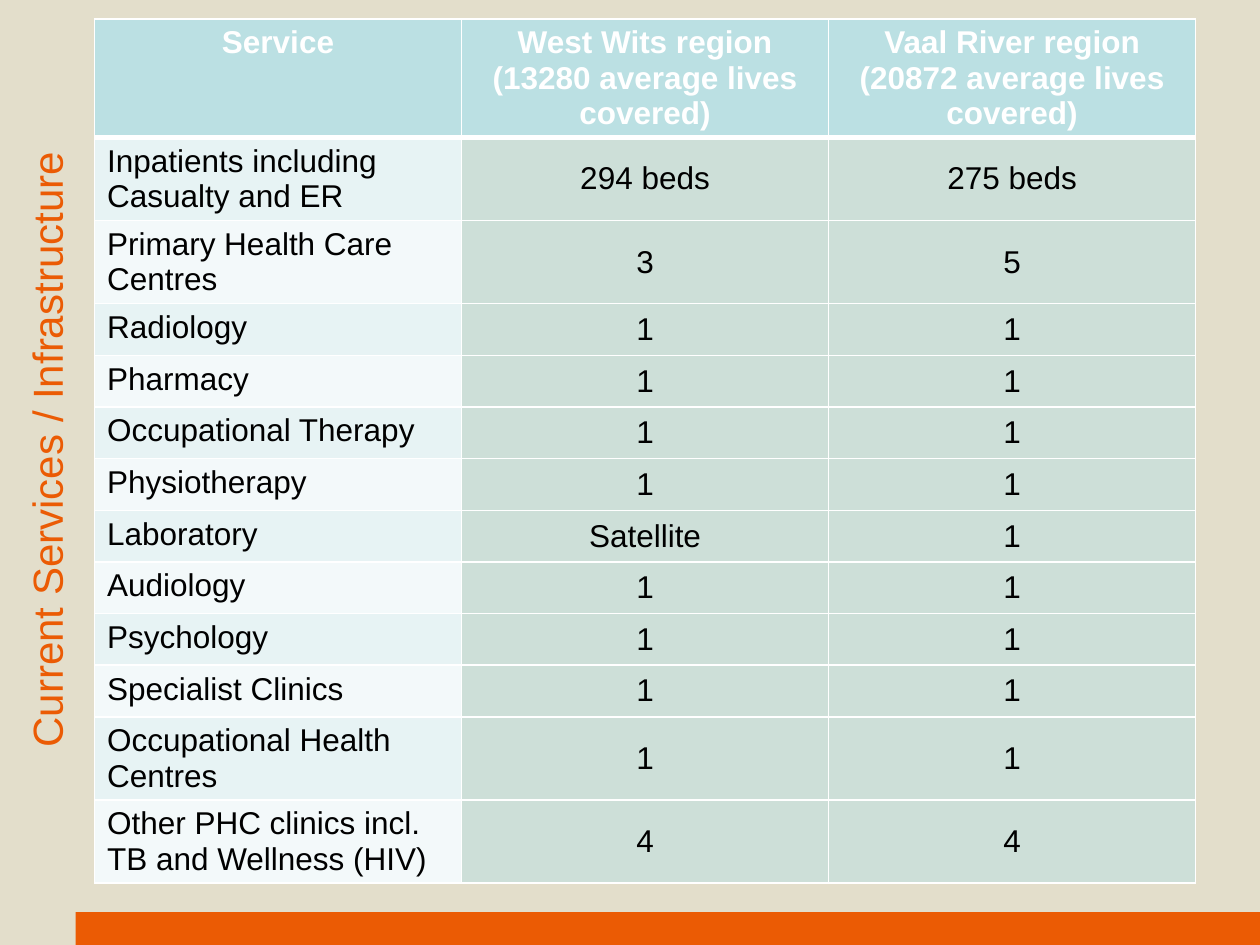
from dataclasses import dataclass

from lxml.etree import SubElement
from pptx import Presentation
from pptx.dml.color import RGBColor
from pptx.enum.shapes import MSO_SHAPE
from pptx.enum.text import MSO_ANCHOR, PP_ALIGN
from pptx.oxml import parse_xml
from pptx.oxml.ns import nsdecls, qn
from pptx.util import Inches, Pt


@dataclass(frozen=True)
class Theme:
    face: str = "Arial"
    sand: str = "E3DECB"
    flame: str = "EB5B04"
    aqua: str = "BBE0E3"
    bands: tuple[str, str] = ("E7F3F4", "F3F9FA")
    white: str = "FFFFFF"
    black: str = "000000"
    head: int = 24
    body: int = 18
    alpha: int = 55
    thin: int = 1
    thick: int = 3


@dataclass(frozen=True)
class Service:
    name: str
    west: str = "1"
    vaal: str = "1"


@dataclass(frozen=True)
class Look:
    fill: str
    ink: str
    bold: bool = False
    align: PP_ALIGN = PP_ALIGN.CENTER
    anchor: MSO_ANCHOR = MSO_ANCHOR.MIDDLE
    alpha: int = 100
    base: int = 1


THEME = Theme()

HEADS = (
    "Service",
    "West Wits region (13280 average lives covered)",
    "Vaal River region (20872 average lives covered)",
)

ROWS = (
    Service("Inpatients including Casualty and ER", "294 beds", "275 beds"),
    Service("Primary Health Care Centres", "3", "5"),
    Service("Radiology"),
    Service("Pharmacy"),
    Service("Occupational Therapy"),
    Service("Physiotherapy"),
    Service("Laboratory", "Satellite"),
    Service("Audiology"),
    Service("Psychology"),
    Service("Specialist Clinics"),
    Service("Occupational Health Centres"),
    Service("Other PHC clinics incl. TB and Wellness (HIV)", "4", "4"),
)


def apply(item, values: dict) -> None:
    for key, value in values.items():
        setattr(item, key, value)


def paint(fill, hue: str) -> None:
    fill.solid()
    fill.fore_color.rgb = RGBColor.from_string(hue)


def style(para, size: int, ink: str, bold: bool, align: PP_ALIGN) -> None:
    para.alignment = align
    for run in para.runs:
        apply(run.font, {"name": THEME.face, "size": Pt(size), "bold": bold})
        run.font.color.rgb = RGBColor.from_string(ink)


def border(cell, base: int) -> None:
    widths = {"lnL": THEME.thin, "lnR": THEME.thin, "lnT": THEME.thin, "lnB": base}
    props = cell._tc.get_or_add_tcPr()
    for place, (tag, width) in enumerate(widths.items()):
        line = parse_xml(
            f'<a:{tag} {nsdecls("a")} w="{Pt(width)}"><a:solidFill>'
            f'<a:srgbClr val="{THEME.white}"/></a:solidFill></a:{tag}>'
        )
        props.insert(place, line)


def write(cell, text: str, look: Look) -> None:
    apply(cell, {"text": text, "vertical_anchor": look.anchor})
    style(cell.text_frame.paragraphs[0], THEME.body, look.ink, look.bold, look.align)
    paint(cell.fill, look.fill)
    if look.alpha < 100:
        tint = cell._tc.tcPr.find(".//" + qn("a:srgbClr"))
        SubElement(tint, qn("a:alpha"), val=str(look.alpha * 1000))
    border(cell, look.base)


def draw_bar(slide) -> None:
    bar = slide.shapes.add_shape(
        MSO_SHAPE.RECTANGLE, Inches(0.6), Inches(7.24), Inches(9.4), Inches(0.26)
    )
    bar.shadow.inherit = False
    paint(bar.fill, THEME.flame)
    bar.line.fill.background()


def draw_title(slide, text: str) -> None:
    title = slide.shapes.title
    apply(title, {
        "left": Inches(-3.98), "top": Inches(3.27),
        "width": Inches(8.74), "height": Inches(0.5), "rotation": 270,
    })
    frame = title.text_frame
    apply(frame, {
        "text": text, "word_wrap": True, "vertical_anchor": MSO_ANCHOR.MIDDLE,
        "margin_left": 0, "margin_top": 0,
        "margin_right": Inches(0.1), "margin_bottom": Inches(0.05),
    })
    style(frame.paragraphs[0], THEME.head, THEME.flame, False, PP_ALIGN.CENTER)


def draw_table(slide, rows: tuple[Service, ...]) -> None:
    count = len(rows) + 1
    high = Inches(0.41)
    table = slide.shapes.add_table(
        count, len(HEADS), Inches(0.75), Inches(0.15), Inches(8.74), high * count
    ).table
    for row in table.rows:
        row.height = high
    top = Look(THEME.aqua, THEME.white, bold=True, anchor=MSO_ANCHOR.TOP, base=THEME.thick)
    data = Look(THEME.aqua, THEME.black, alpha=THEME.alpha)
    for col, text in enumerate(HEADS):
        write(table.cell(0, col), text, top)
    for num, row in enumerate(rows):
        band = THEME.bands[num % 2]
        label = Look(band, THEME.black, align=PP_ALIGN.LEFT, anchor=MSO_ANCHOR.TOP)
        cells = ((row.name, label), (row.west, data), (row.vaal, data))
        for col, (text, look) in enumerate(cells):
            write(table.cell(num + 1, col), text, look)


def main() -> None:
    deck = Presentation()
    apply(deck, {"slide_width": Inches(10), "slide_height": Inches(7.5)})
    slide = deck.slides.add_slide(deck.slide_layouts[5])
    paint(slide.background.fill, THEME.sand)
    draw_bar(slide)
    draw_title(slide, "Current Services / Infrastructure")
    draw_table(slide, ROWS)
    deck.save("out.pptx")


if __name__ == "__main__":
    main()
